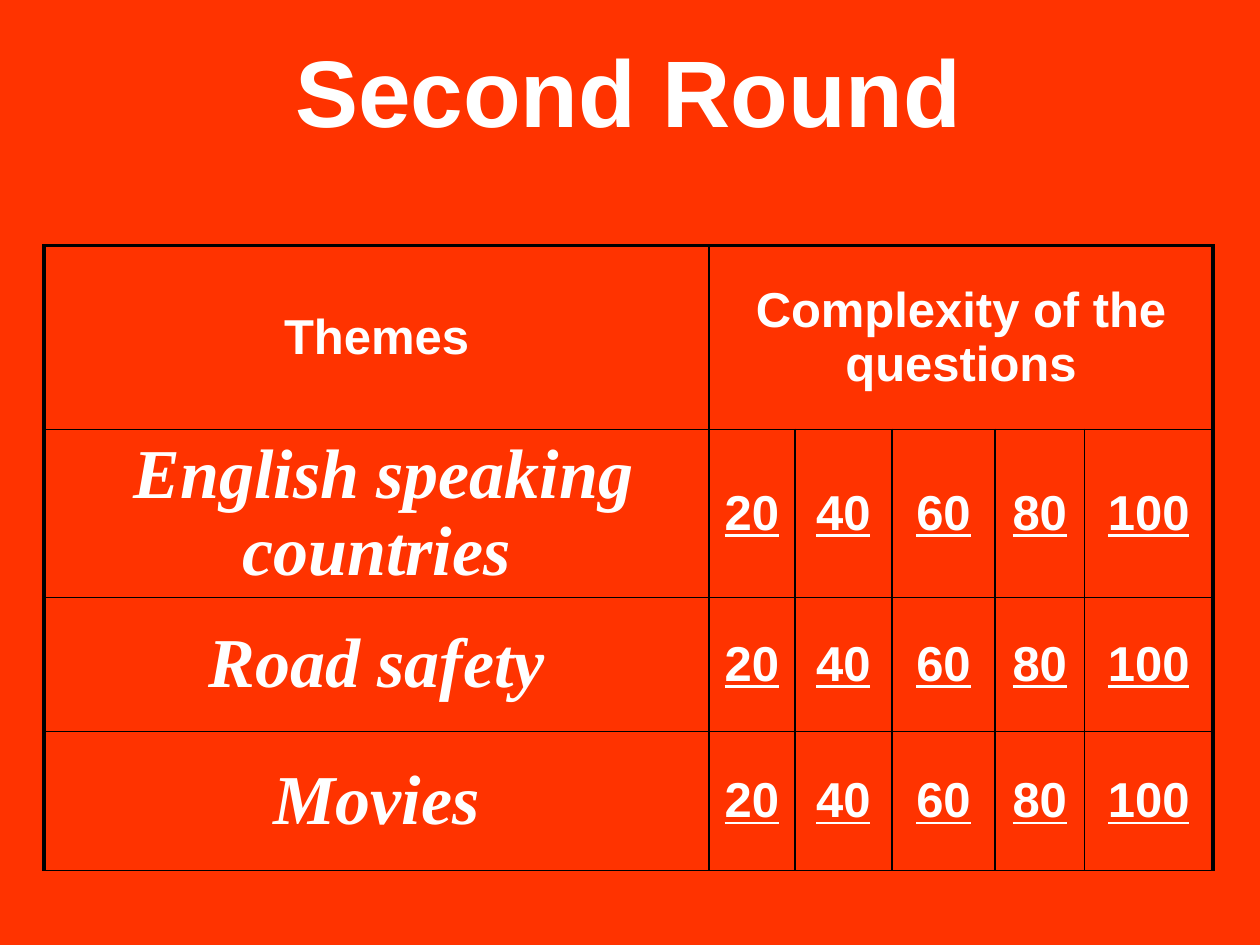
import pptx
import pptx.util
import pptx.dml.color
import pptx.enum.text
import pptx.oxml
import pptx.oxml.ns

Pt = pptx.util.Pt
RGB = pptx.dml.color.RGBColor
Align = pptx.enum.text.PP_ALIGN
Anchor = pptx.enum.text.MSO_ANCHOR

# Content
title = "Second Round"
heads = ("Themes", "Complexity of the questions")
topics = ((" ", "English speaking countries"), ("Road safety",), ("Movies",))
points = ("20", "40", "60", "80", "100")

# Theme and sizes in points
theme = {
    "back": "FF3300", "text": "FFFFFF", "line": "000000",
    "sans": "Arial", "serif": "Times New Roman",
    "title": 54, "body": 28, "topic": 40,
    "thin": 1, "thick": 2.25,
}
left, top = 25.2, 140.4
cols = (380, 49, 55.5, 59, 51, 73.5)
rows = (105, 96, 76.5, 79.5)


def add_run(para, text, size, face="sans", **style):
    run = para.add_run()
    run.text = text
    font = run.font
    font.name, font.size, font.bold = theme[face], Pt(size), True
    font.color.rgb = RGB.from_string(theme["text"])
    for key, value in style.items():
        setattr(font, key, value)


def set_lines(cell, row, col):
    props = cell._tc.get_or_add_tcPr()
    outer = {"L": col == 0, "R": col == len(cols) - 1, "T": row == 0, "B": False}
    for at, (side, edge) in enumerate(outer.items()):
        width = Pt(theme["thick" if edge else "thin"])
        props.insert(at, pptx.oxml.parse_xml(
            f'<a:ln{side} {pptx.oxml.ns.nsdecls("a")} w="{int(width)}">'
            f'<a:solidFill><a:srgbClr val="{theme["line"]}"/></a:solidFill>'
            f'</a:ln{side}>'))


# Slide and background
deck = pptx.Presentation()
deck.slide_width, deck.slide_height = Pt(720), Pt(540)
slide = deck.slides.add_slide(deck.slide_layouts[5])
fill = slide.background.fill
fill.solid()
fill.fore_color.rgb = RGB.from_string(theme["back"])

# Title
head = slide.shapes.title
head.left, head.top, head.width, head.height = map(Pt, (161.5, 15, 448, 72))
frame = head.text_frame
frame.auto_size = pptx.enum.text.MSO_AUTO_SIZE.NONE
frame.vertical_anchor = Anchor.TOP
frame.paragraphs[0].alignment = Align.LEFT
add_run(frame.paragraphs[0], title, theme["title"])

# Empty table grid
table = slide.shapes.add_table(
    len(rows), len(cols), Pt(left), Pt(top), Pt(sum(cols)), Pt(sum(rows))).table
table.first_row = table.horz_banding = False
for col, width in zip(table.columns, cols):
    col.width = Pt(width)
for row, height in zip(table.rows, rows):
    row.height = Pt(height)
for r in range(len(rows)):
    for c in range(len(cols)):
        cell = table.cell(r, c)
        cell.fill.background()
        cell.vertical_anchor = Anchor.MIDDLE
        cell.text_frame.paragraphs[0].alignment = Align.CENTER
        set_lines(cell, r, c)
table.cell(0, 1).merge(table.cell(0, len(cols) - 1))
# The merged head takes its right edge from the last column
merged = table.cell(0, 1)._tc.tcPr
merged.find(pptx.oxml.ns.qn("a:lnR")).set("w", str(int(Pt(theme["thick"]))))

# Table text
for c, text in enumerate(heads):
    add_run(table.cell(0, c).text_frame.paragraphs[0], text, theme["body"])
for r, parts in enumerate(topics, 1):
    para = table.cell(r, 0).text_frame.paragraphs[0]
    for gap in parts[:-1]:
        add_run(para, gap, theme["body"])
    add_run(para, parts[-1], theme["topic"], "serif", italic=True)
    for c, text in enumerate(points, 1):
        add_run(table.cell(r, c).text_frame.paragraphs[0], text,
                theme["body"], underline=True)

deck.save("out.pptx")
